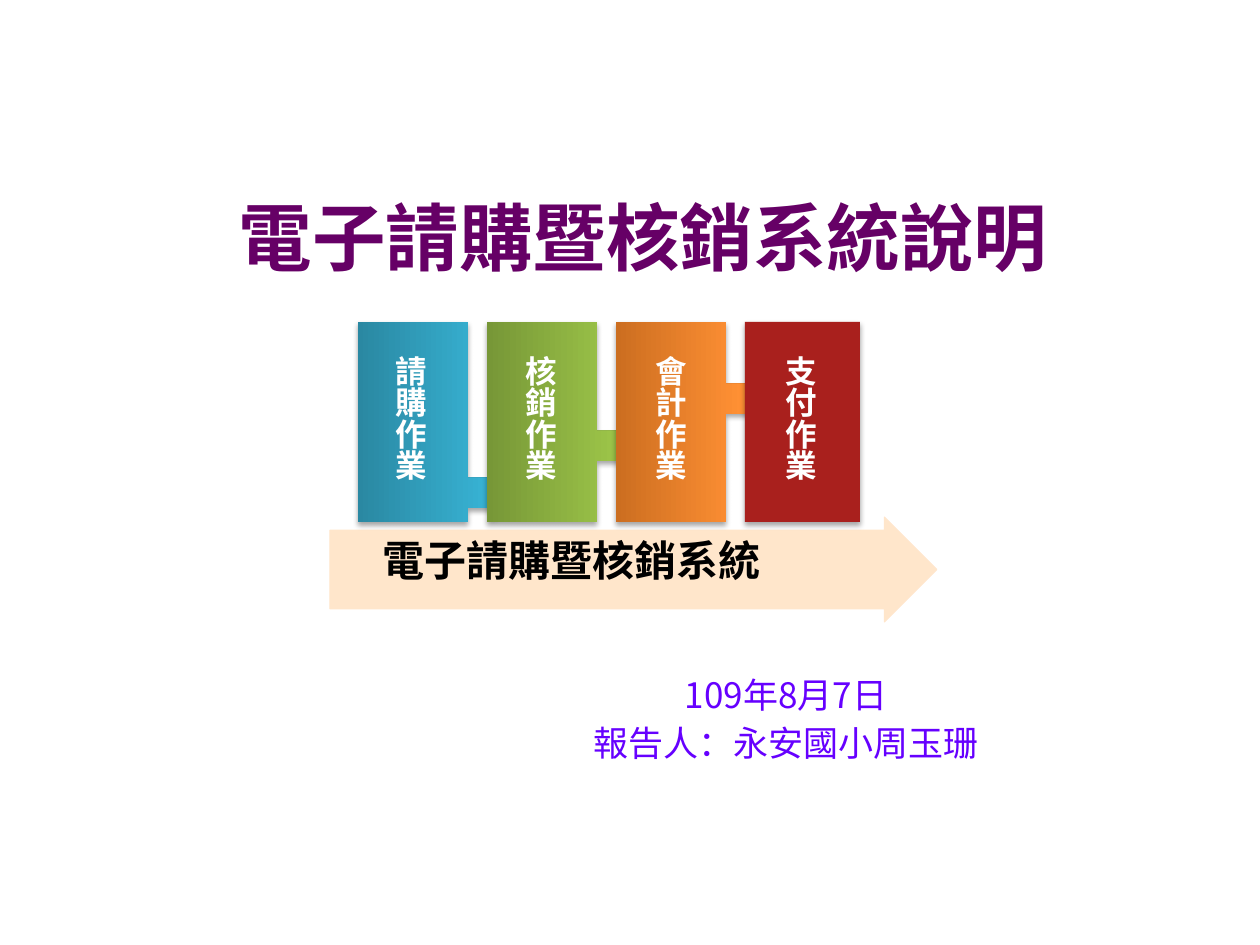
from dataclasses import dataclass

from lxml.etree import SubElement
from pptx import Presentation
from pptx.dml.color import RGBColor as Rgb
from pptx.enum.shapes import MSO_SHAPE as Shape
from pptx.enum.text import MSO_ANCHOR as Anchor, PP_ALIGN as Align
from pptx.oxml.ns import qn
from pptx.util import Emu, Pt

SCALE = 914400 / 126


@dataclass(frozen=True)
class Theme:
    font: str = "Noto Sans CJK SC"
    title: str = "660066"
    subtitle: str = "6600FF"
    arrow: str = "FFE6CB"
    ink: str = "000000"
    label: str = "FFFFFF"
    payment: str = "A9201D"
    shadow: str = "000000"
    title_size: int = 42
    caption_size: int = 24
    subtitle_size: int = 20
    label_size: int = 18


THEME = Theme()
LINKED_STEPS = [
    ("請購作業", "2A88A2", "37B1D2"),
    ("核銷作業", "779737", "9BC348"),
    ("會計作業", "CC6E20", "FF9034"),
]
LAST_STEP = "支付作業"


def px(length):
    return Emu(round(length * SCALE))


def add_text_box(page, box, anchor=Anchor.MIDDLE):
    frame = page.shapes.add_textbox(*map(px, box)).text_frame
    frame.word_wrap = True
    frame.vertical_anchor = anchor
    return frame


def write(para, text, size, color, bold=False, align=Align.CENTER):
    para.alignment = align
    span = para.add_run()
    span.text = text
    span.font.size = Pt(size)
    span.font.bold = bold
    span.font.name = THEME.font
    span.font.color.rgb = Rgb.from_string(color)
    SubElement(span.font._element, qn("a:ea"), typeface=THEME.font)


def add_shadow(shape):
    shape.shadow.inherit = False
    effects = shape._element.spPr.find(qn("a:effectLst"))
    outer = SubElement(effects, qn("a:outerShdw"), blurRad=str(Pt(3.1)),
                       dist=str(Pt(1.8)), dir="5400000", rotWithShape="0")
    tint = SubElement(outer, qn("a:srgbClr"), val=THEME.shadow)
    SubElement(tint, qn("a:alpha"), val="35000")


def add_title(page, box):
    para = add_text_box(page, box).paragraphs[0]
    para.line_spacing = Pt(68)
    write(para, "電子請購暨核銷系統說明", THEME.title_size, THEME.title, True)


def add_subtitle(page, box):
    frame = add_text_box(page, box)
    date, speaker = frame.paragraphs[0], frame.add_paragraph()
    for para, text in ((date, "109年8月7日"), (speaker, "報告人：永安國小周玉珊")):
        para.line_spacing = 0.9
        write(para, text, THEME.subtitle_size, THEME.subtitle)
    date._p.get_or_add_pPr().set("indent", str(px(-28)))
    speaker.space_before = Pt(6)


def add_system_arrow(page, box):
    left, top, width, height = box
    arrow = page.shapes.add_shape(Shape.RIGHT_ARROW, *map(px, box))
    arrow.adjustments[0], arrow.adjustments[1] = 0.75, 0.5
    arrow.shadow.inherit = False
    arrow.fill.solid()
    arrow.fill.fore_color.rgb = Rgb.from_string(THEME.arrow)
    arrow.line.color.rgb = Rgb.from_string(THEME.arrow)
    arrow.line.width = Pt(0.5)
    frame = add_text_box(page, (left + 52, top + 26, 515, 39), Anchor.TOP)
    frame.margin_left = frame.margin_right = px(1)
    frame.margin_top = frame.margin_bottom = px(1)
    para = frame.paragraphs[0]
    para.line_spacing = 0.8
    write(para, "電子請購暨核銷系統", THEME.caption_size, THEME.ink, True, Align.LEFT)


def add_linked_card(page, box, neck, dark, light):
    left, top, width, height = box
    right, bottom = left + width, top + height
    neck_top, neck_bottom = top + neck, top + neck + 30
    head = right + 24
    builder = page.shapes.build_freeform(left, top, scale=SCALE)
    builder.add_line_segments([
        (right, top), (right, neck_top), (head, neck_top), (head, neck_top - 10),
        (head + 23, neck_top + 15), (head, neck_bottom + 10), (head, neck_bottom),
        (right, neck_bottom), (right, bottom), (left, bottom),
    ])
    card = builder.convert_to_shape()
    card.fill.gradient()
    card.fill.gradient_angle = 0
    for stop, color, position in zip(card.fill.gradient_stops, (dark, light), (0, 0.8)):
        stop.color.rgb = Rgb.from_string(color)
        stop.position = position
    card.line.fill.background()
    add_shadow(card)


def add_last_card(page, box):
    card = page.shapes.add_shape(Shape.RECTANGLE, *map(px, box))
    card.fill.solid()
    card.fill.fore_color.rgb = Rgb.from_string(THEME.payment)
    card.line.fill.background()
    add_shadow(card)


def add_label(page, box, text):
    frame = add_text_box(page, box)
    frame._txBody.bodyPr.set("vert", "eaVert")
    write(frame.paragraphs[0], text, THEME.label_size, THEME.label, True)


def add_steps(page, box):
    left, top, width, height = box
    pitch, card_width, last_width = 129, 110, 115
    for index, (text, dark, light) in enumerate(LINKED_STEPS):
        card = (left + index * pitch, top, card_width, height)
        add_linked_card(page, card, 156 - 47 * index, dark, light)
    add_last_card(page, (left + width - last_width, top, last_width, height))
    labels = [step[0] for step in LINKED_STEPS] + [LAST_STEP]
    for index, text in enumerate(labels):
        add_label(page, (left + 21 + index * 130, top + 21, 62, 163), text)


def main():
    deck = Presentation()
    deck.slide_width, deck.slide_height = px(1260), px(945)
    page = deck.slides.add_slide(deck.slide_layouts[6])
    add_title(page, (26, 149, 1234, 144))
    add_subtitle(page, (570, 678, 432, 87))
    add_system_arrow(page, (330, 517, 607, 105))
    add_steps(page, (358, 322, 502, 200))
    deck.save("out.pptx")


if __name__ == "__main__":
    main()
